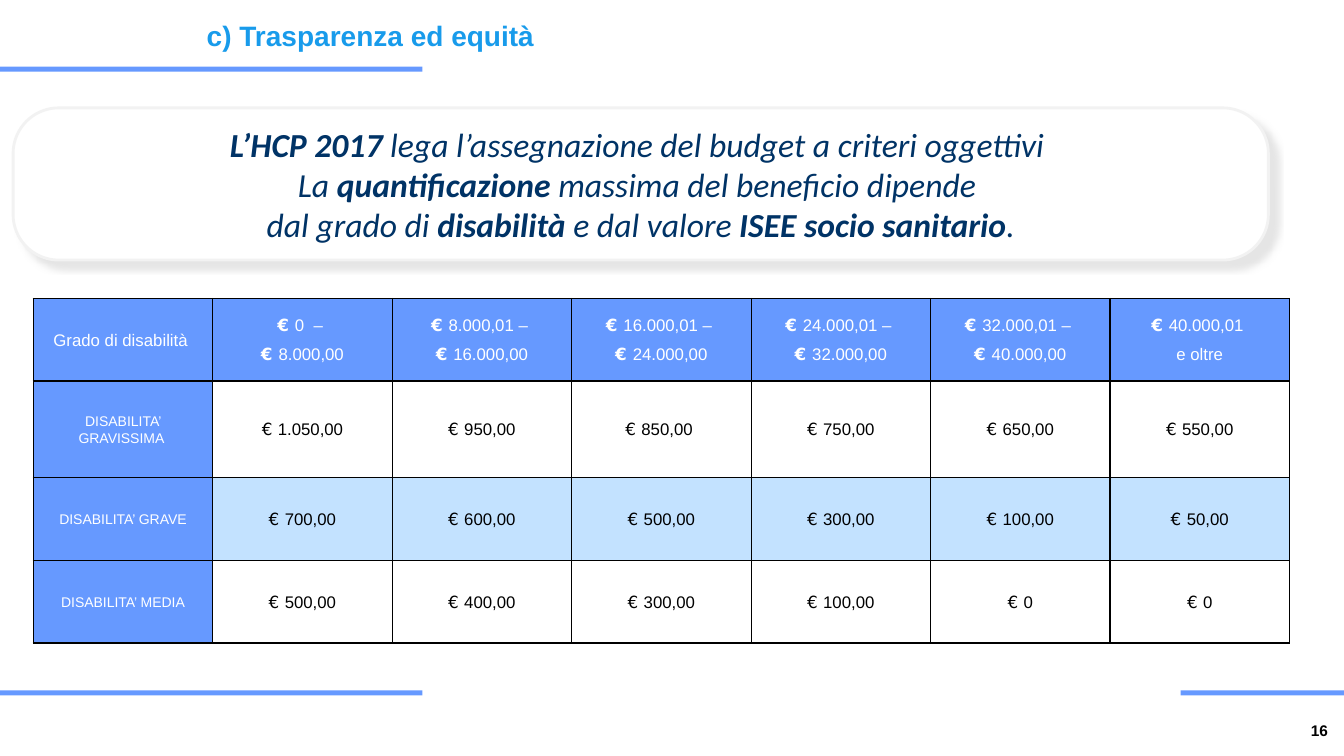
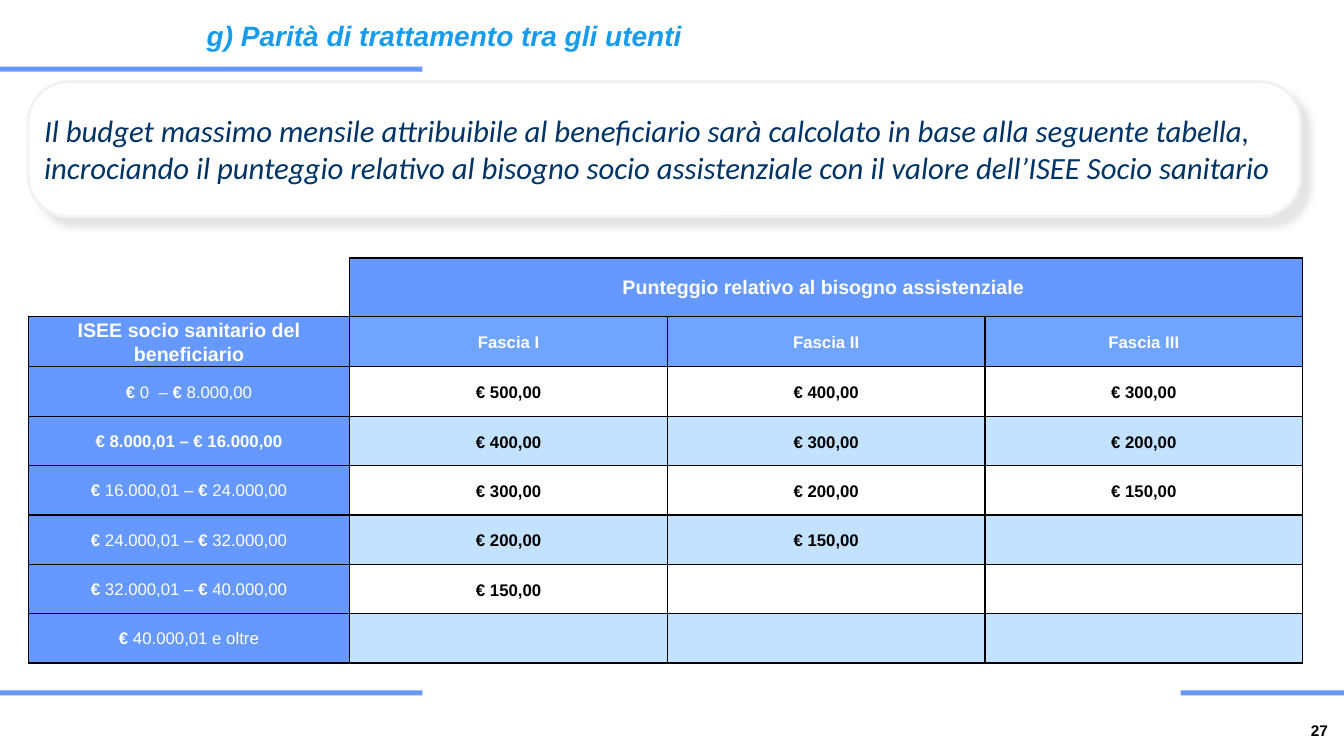
from dataclasses import dataclass, replace
from typing import Optional

from lxml.etree import SubElement
from pptx import Presentation
from pptx.dml.color import RGBColor
from pptx.enum.shapes import MSO_SHAPE as Shape
from pptx.enum.text import MSO_ANCHOR as Anchor, MSO_AUTO_SIZE as Auto, PP_ALIGN as Align
from pptx.oxml.ns import qn
from pptx.util import Inches, Pt

COLORS = {
    "blue": "6699FF", "mid": "6FA4FF", "pale": "C3E2FF", "white": "FFFFFF",
    "black": "000000", "navy": "003366", "title": "189BEB",
    "edge": "F2F2F2", "shade": "BFBFBF",
}


@dataclass(frozen=True)
class Look:
    size: float
    color: str
    bold: bool = False
    italic: bool = False
    font: str = "Arial"
    euro: Optional[str] = None
    align: Align = Align.CENTER
    line: Optional[float] = None
    before: float = 0
    after: float = 0


@dataclass(frozen=True)
class Box:
    left: float
    top: float
    width: float
    height: float

    def emu(self) -> tuple:
        return tuple(Inches(n) for n in (self.left, self.top, self.width, self.height))


@dataclass(frozen=True)
class Cell:
    text: str
    look: Look
    fill: str
    sides: str = "LRTB"


# Shared looks and places
TITLE = Look(20, "title", bold=True, align=Align.LEFT)
PAGE = Look(11, "black", bold=True, align=Align.RIGHT)
CLAIM = Look(24, "navy", italic=True, font="Calibri")
HEAD = Look(12, "white", line=1.07, after=6)
VALUE = replace(HEAD, color="black")
SCORE = Look(12, "black", bold=True, line=1.15, before=6, after=10)

BANDS = [Box(0, 6.85, 4.19, 0.05), Box(0, 0.66, 4.19, 0.05), Box(11.71, 6.85, 1.62, 0.05)]
TITLE_BOX = Box(1.95, 0.13, 10.62, 0.5)
PAGE_BOX = Box(12.08, 7.1, 1.19, 0.28)

# ISEE ranges used by both tables
RANGES = [
    ("0  –", "8.000,00"),
    ("8.000,01 –", "16.000,00"),
    ("16.000,01 –", "24.000,00"),
    ("24.000,01 –", "32.000,00"),
    ("32.000,01 –", "40.000,00"),
]


def rgb(name: str) -> RGBColor:
    return RGBColor.from_string(COLORS[name])


def paint(shape, fill: str, edge: Optional[str] = None) -> None:
    shape.shadow.inherit = False
    shape.fill.solid()
    shape.fill.fore_color.rgb = rgb(fill)
    if edge:
        shape.line.color.rgb = rgb(edge)
        shape.line.width = Pt(2)
    else:
        shape.line.fill.background()


def write(frame, text: str, look: Look) -> None:
    """Fill a frame, one paragraph a line; asterisks switch bold."""
    for row, line in enumerate(text.split("\n")):
        par = frame.add_paragraph() if row else frame.paragraphs[0]
        par.alignment = look.align
        par.line_spacing = look.line
        par.space_before = Pt(look.before)
        par.space_after = Pt(look.after)
        font = par.font
        font.name, font.size = look.font, Pt(look.size)
        font.bold, font.italic = look.bold, look.italic
        font.color.rgb = rgb(look.color)
        for place, chunk in enumerate(line.split("*")):
            mark = "€ " if look.euro and chunk.startswith("€ ") else ""
            for part, face in ((mark, look.euro), (chunk[len(mark):], None)):
                if not part:
                    continue
                run = par.add_run()
                run.text = part
                if face:
                    run.font.name = face
                if place % 2:
                    run.font.bold = not look.bold


def start(deck, title: str, look: Look, page: int):
    """Add a slide with its title, bands and page number."""
    slide = deck.slides.add_slide(deck.slide_layouts[5])
    for band in BANDS:
        paint(slide.shapes.add_shape(Shape.RECTANGLE, *band.emu()), "blue")
    head = slide.shapes.title
    head.left, head.top, head.width, head.height = TITLE_BOX.emu()
    head.text_frame.auto_size = Auto.NONE
    head.text_frame.vertical_anchor = Anchor.TOP
    write(head.text_frame, title, look)
    foot = slide.shapes.add_textbox(*PAGE_BOX.emu()).text_frame
    foot.word_wrap = True
    write(foot, str(page), PAGE)
    return slide


def claim(slide, box: Box, text: str, look: Look) -> None:
    """Add the rounded panel with a soft shadow."""
    panel = slide.shapes.add_shape(Shape.ROUNDED_RECTANGLE, *box.emu())
    panel.adjustments[0] = 0.3
    paint(panel, "white", "edge")
    glow = panel._element.spPr.find(qn("a:effectLst"))
    cast = SubElement(glow, qn("a:outerShdw"), blurRad=str(Pt(4)), dist=str(Pt(8)),
                      dir="2700000", algn="tl", rotWithShape="0")
    tint = SubElement(cast, qn("a:srgbClr"), val=COLORS["shade"])
    SubElement(tint, qn("a:alpha"), val="40000")
    frame = panel.text_frame
    frame.word_wrap = True
    frame.vertical_anchor = Anchor.MIDDLE
    frame.margin_left = frame.margin_right = Inches(0.04)
    frame.margin_top = frame.margin_bottom = Inches(0.04)
    write(frame, text, look)


def border(cell, sides: str) -> None:
    props = cell._tc.get_or_add_tcPr()
    for side in sides:
        line = SubElement(props, qn(f"a:ln{side}"), w=str(Pt(1)))
        fill = SubElement(line, qn("a:solidFill"))
        SubElement(fill, qn("a:srgbClr"), val=COLORS["black"])


def grid(slide, left: float, top: float, cols: list[float], rows: list[float],
         cells: list[list[Cell]]):
    box = Box(left, top, sum(cols), sum(rows))
    table = slide.shapes.add_table(len(rows), len(cols), *box.emu()).table
    table.first_row = table.horz_banding = False
    for col, width in zip(table.columns, cols):
        col.width = Inches(width)
    for row, height in zip(table.rows, rows):
        row.height = Inches(height)
    for r, line in enumerate(cells):
        for c, item in enumerate(line):
            cell = table.cell(r, c)
            border(cell, item.sides)
            cell.fill.solid()
            cell.fill.fore_color.rgb = rgb(item.fill)
            cell.vertical_anchor = Anchor.MIDDLE
            cell.margin_left = cell.margin_right = Inches(0.1)
            cell.margin_top = cell.margin_bottom = 0
            if item.text:
                write(cell.text_frame, item.text, item.look)
    return table


def equity(deck) -> None:
    slide = start(deck, "c) Trasparenza ed equità", TITLE, 16)
    claim(slide, Box(0.13, 1.07, 12.45, 1.51),
          "*L’HCP 2017 *lega l’assegnazione del budget a criteri oggettivi \n"
          "La* quantificazione *massima del beneficio dipende \n"
          "dal grado di *disabilità* e dal valore *ISEE socio sanitario*.", CLAIM)

    # Budget by disability and ISEE range
    euro = "DejaVu Sans"
    heads = [f"*€ *{low} \n*€ *{high}" for low, high in RANGES]
    heads = ["Grado di disabilità ", *heads, "*€ *40.000,01 \ne oltre"]
    budgets = [
        ("DISABILITA’ GRAVISSIMA ",
         ["1.050,00", "950,00", "850,00 ", "750,00", "650,00", "550,00"]),
        ("DISABILITA’ GRAVE", ["700,00", "600,00", "500,00", "300,00", "100,00", "50,00"]),
        ("DISABILITA’ MEDIA", ["500,00", "400,00", "300,00", "100,00", "0", "0"]),
    ]
    cells = [[Cell(text, replace(HEAD, euro=euro), "blue") for text in heads]]
    for n, (name, sums) in enumerate(budgets):
        fill = "pale" if n % 2 else "white"
        cells.append([Cell(name, replace(HEAD, size=10), "blue")]
                     + [Cell(f"€ {s}", replace(VALUE, euro=euro), fill) for s in sums])
    grid(slide, 0.33, 2.96, [1.78] * 7, [0.82, 0.96, 0.82, 0.82], cells)


def parity(deck) -> None:
    slide = start(deck, "g) Parità di trattamento tra gli utenti",
                  replace(TITLE, italic=True), 27)
    claim(slide, Box(0.28, 0.81, 12.62, 1.34),
          "Il budget massimo mensile attribuibile al beneficiario sarà calcolato in base "
          "alla seguente tabella,\n"
          "incrociando il punteggio relativo al bisogno socio assistenziale con il valore "
          "dell’ISEE Socio sanitario", replace(CLAIM, size=22, align=Align.LEFT))

    # Budget by ISEE range and score
    top = replace(HEAD, size=14, bold=True)
    names = [f"*€ *{low} *€ *{high}" for low, high in RANGES] + ["*€ *40.000,01 e oltre"]
    names[1] = f"*{names[1].replace('*', '')}*"
    sums = [(500, 400, 300), (400, 300, 200), (300, 200, 150), (200, 150), (150,), ()]
    cells = [
        [Cell("", top, "white", "RB"),
         Cell("Punteggio relativo al bisogno assistenziale ", top, "blue"),
         *[Cell("", top, "blue")] * 2],
        [Cell("ISEE socio sanitario del beneficiario", top, "blue")]
        + [Cell(f"Fascia {n}", replace(SCORE, color="white"), "mid")
           for n in ("I", "II", "III")],
    ]
    for n, (name, row) in enumerate(zip(names, sums)):
        fill = "pale" if n % 2 else "white"
        texts = [f"€ {s},00" for s in row] + [""] * (3 - len(row))
        cells.append([Cell(name, HEAD, "blue")] + [Cell(t, SCORE, fill) for t in texts])
    table = grid(slide, 0.28, 2.56, [3.19] + [3.15] * 3, [0.58] + [0.49] * 7, cells)
    table.cell(0, 1).merge(table.cell(0, 3))


def main() -> None:
    deck = Presentation()
    deck.slide_width, deck.slide_height = Inches(13.33), Inches(7.5)
    equity(deck)
    parity(deck)
    deck.save("out.pptx")


if __name__ == "__main__":
    main()
